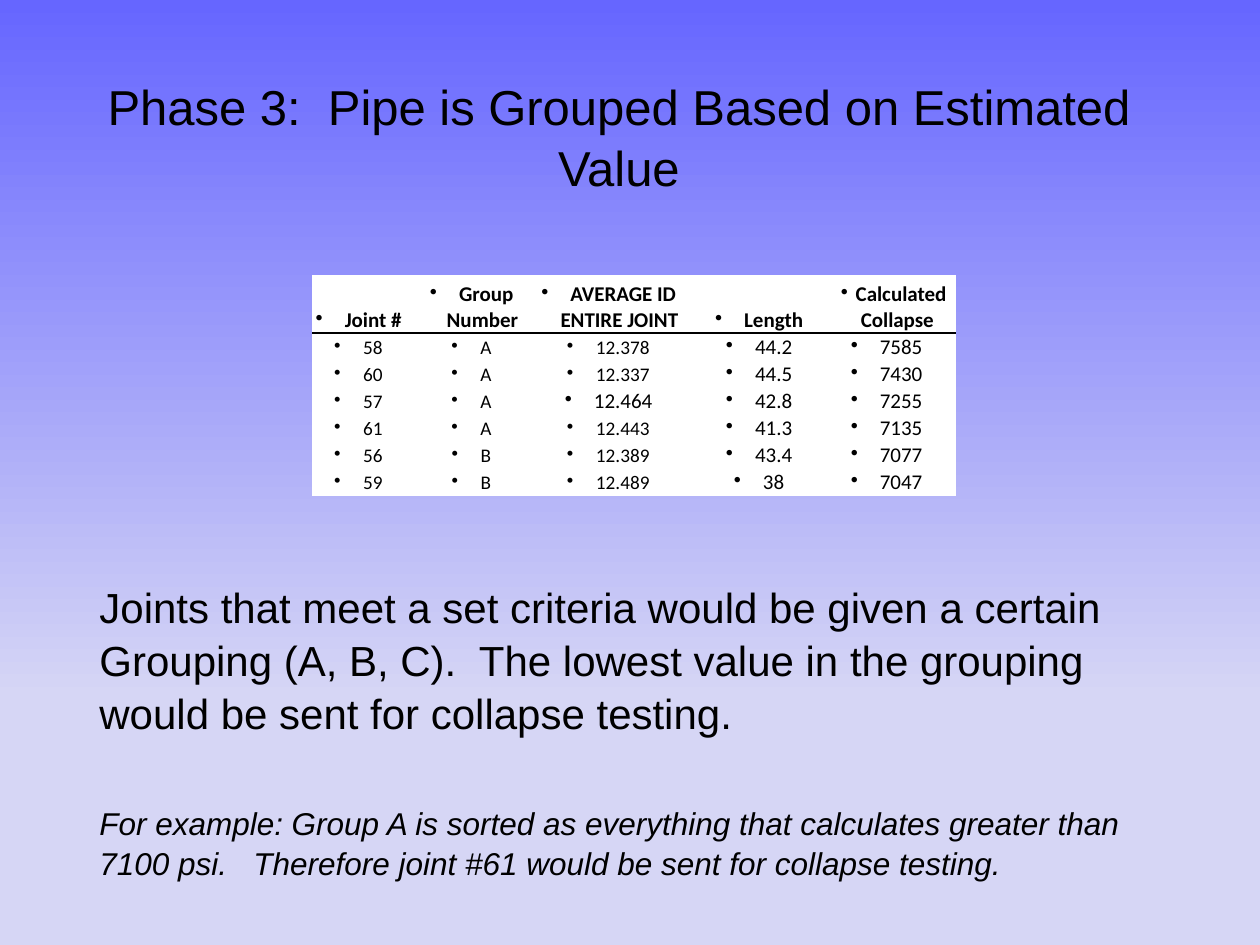
from lxml import etree
from pptx import Presentation
from pptx.dml.color import RGBColor
from pptx.enum.text import MSO_ANCHOR, PP_ALIGN
from pptx.oxml.ns import qn
from pptx.util import Pt

PX = 914400 // 126
CENTER, LEFT = PP_ALIGN.CENTER, PP_ALIGN.LEFT
BOTTOM = MSO_ANCHOR.BOTTOM
BLACK, WHITE = "000000", "FFFFFF"

COLS = [113, 113, 161, 140, 115]
HEAD_H, ROW_H = 57, 27
HANG = 29
HEADS = ["Joint #", "Group Number", "AVERAGE ID ENTIRE JOINT", "Length",
         "Calculated Collapse"]
JOINTS = [
    ["58", "A", "12.378", "44.2", "7585"],
    ["60", "A", "12.337", "44.5", "7430"],
    ["57", "A", "12.464", "42.8", "7255"],
    ["61", "A", "12.443", "41.3", "7135"],
    ["56", "B", "12.389", "43.4", "7077"],
    ["59", "B", "12.489", "38", "7047"],
]
LARGE = "12.464"  # the one average set in the larger size

TITLE = "Phase 3:  Pipe is Grouped Based on Estimated Value"
RULE = ("Joints that meet a set criteria would be given a certain Grouping "
        "(A, B, C).  The lowest value in the grouping would be sent for "
        "collapse testing.")
CASE = ("For example: Group A is sorted as everything that calculates greater "
        "than 7100 psi.   Therefore joint #61 would be sent for collapse "
        "testing.")


def px(n):
    return n * PX


def rgb(code):
    return RGBColor.from_string(code)


def set_font(para, name, size, bold=False, italic=False):
    font = para.font
    font.name, font.size = name, Pt(size)
    font.bold, font.italic = bold, italic
    font.color.rgb = rgb(BLACK)


def paint_back(slide, top, low, end):
    """Fade from top to low, reached at the fraction end of the height."""
    fill = slide.background.fill
    fill.gradient()
    fill.gradient_angle = 270
    for stop, code, pos in zip(fill.gradient_stops, (top, low), (0, end)):
        stop.color.rgb = rgb(code)
        stop.position = pos


def add_text(slide, box, paras, align):
    """Each paragraph is (text, size, italic, space before)."""
    frame = slide.shapes.add_textbox(*map(px, box)).text_frame
    frame.word_wrap = True
    for i, (text, size, italic, before) in enumerate(paras):
        para = frame.add_paragraph() if i else frame.paragraphs[0]
        para.text = text
        para.alignment = align
        para.line_spacing = 1.05
        if before:
            para.space_before = Pt(before)
        set_font(para, "Arial", size, italic=italic)


def add_bullet(para):
    props = para._p.get_or_add_pPr()
    props.set("marL", "0")
    props.set("indent", str(-px(HANG)))
    etree.SubElement(props, qn("a:buChar"), char="•")


def add_edge(cell, tag):
    line = etree.Element(qn(tag), w=str(Pt(1)))
    fill = etree.SubElement(line, qn("a:solidFill"))
    etree.SubElement(fill, qn("a:srgbClr"), val=BLACK)
    cell._tc.get_or_add_tcPr().insert(0, line)


def fill_cell(cell, text, size, bold):
    cell.fill.solid()
    cell.fill.fore_color.rgb = rgb(WHITE)
    cell.vertical_anchor = BOTTOM
    cell.margin_left = cell.margin_right = cell.margin_top = px(1)
    cell.margin_bottom = 0
    para = cell.text_frame.paragraphs[0]
    para.text = text
    para.alignment = CENTER
    add_bullet(para)
    set_font(para, "Calibri", size, bold)


def add_joints(slide, left, top):
    rows = [HEADS] + JOINTS
    high = HEAD_H + ROW_H * len(JOINTS)
    table = slide.shapes.add_table(len(rows), len(COLS), px(left), px(top),
                                   px(sum(COLS)), px(high)).table
    table.first_row = table.horz_banding = False
    for col, wide in zip(table.columns, COLS):
        col.width = px(wide)
    for r, row in enumerate(rows):
        table.rows[r].height = px(ROW_H if r else HEAD_H)
        for c, text in enumerate(row):
            cell = table.cell(r, c)
            small = r > 0 and c < 3 and text != LARGE
            fill_cell(cell, text, 11 if small else 12, r == 0)
            if r < 2:
                add_edge(cell, "a:lnT" if r else "a:lnB")


def main():
    deck = Presentation()
    deck.slide_width, deck.slide_height = px(1260), px(945)
    slide = deck.slides.add_slide(deck.slide_layouts[6])
    paint_back(slide, "6666FF", "D6D6F5", 0.74)
    add_text(slide, (69, 67, 1100, 131), [(TITLE, 28, False, 0)], CENTER)
    add_joints(slide, 313, 276)
    add_text(slide, (87, 573, 1065, 372),
             [(RULE, 24, False, 0), (CASE, 18, True, 37)], LEFT)
    deck.save("out.pptx")


if __name__ == "__main__":
    main()
